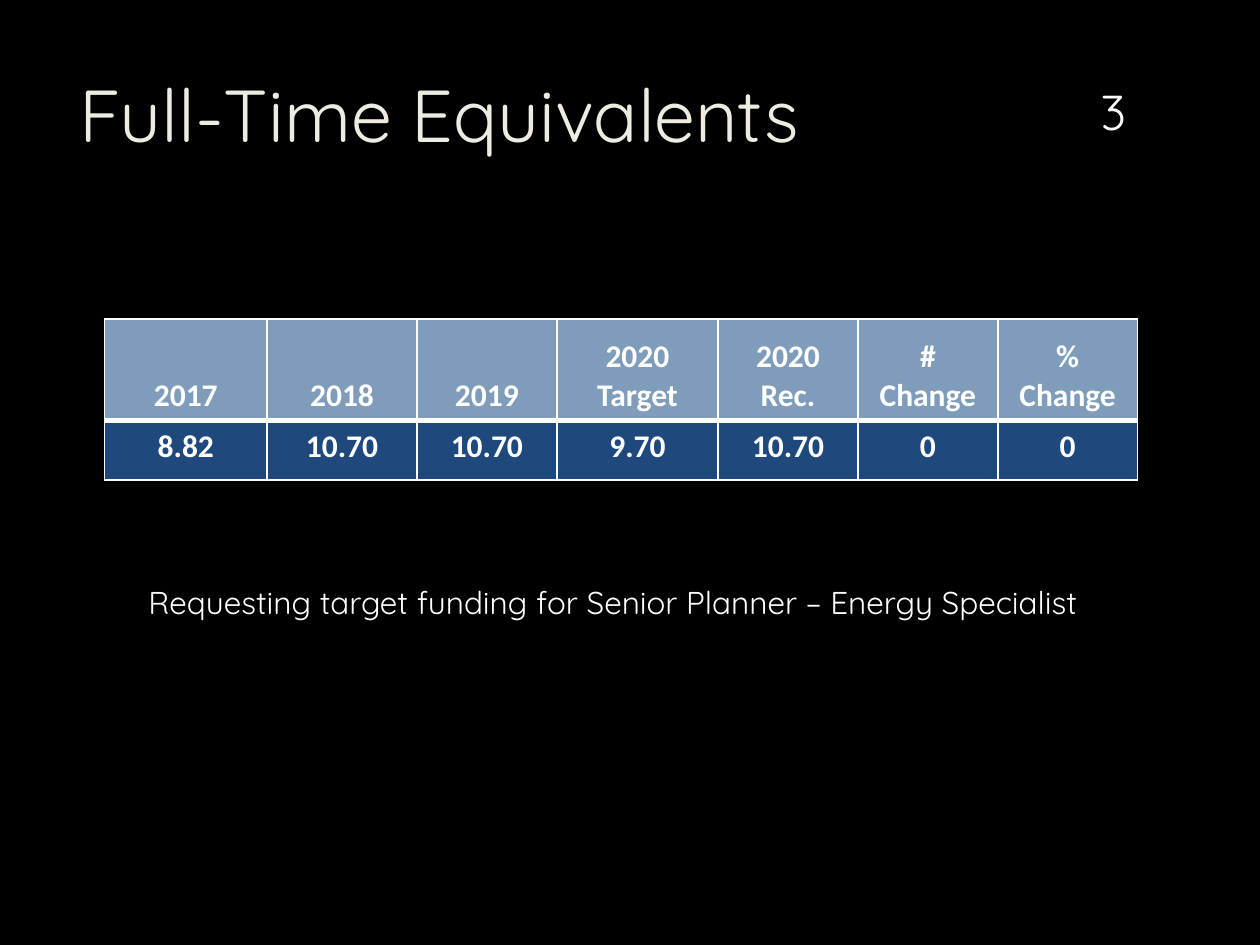
from dataclasses import dataclass

from lxml import etree
from pptx import Presentation
from pptx.dml.color import RGBColor
from pptx.enum.text import MSO_ANCHOR, PP_ALIGN
from pptx.oxml.ns import qn
from pptx.util import Inches, Pt

LEFT, CENTER = PP_ALIGN.LEFT, PP_ALIGN.CENTER
TOP, BOTTOM = MSO_ANCHOR.TOP, MSO_ANCHOR.BOTTOM

# Content
TITLE = "Full-Time Equivalents"
PAGE_NUMBER = "3"
REQUEST = "Requesting target funding for Senior Planner – Energy Specialist"
STAFFING = [
    ["2017", "2018", "2019", "2020 Target", "2020\nRec.", "#\nChange", "%\nChange"],
    ["8.82", "10.70", "10.70", "9.70", "10.70", "0", "0"],
]


@dataclass(frozen=True)
class Theme:
    background: str = "000000"
    title: str = "EEECE1"
    text: str = "FFFFFF"
    header_fill: str = "7F9DBB"
    value_fill: str = "1F497D"
    display_font: str = "Quicksand"
    table_font: str = "Calibri"
    title_size: int = 42
    number_size: int = 28
    body_size: int = 18
    thin_line: int = 1
    thick_line: int = 3


THEME = Theme()

# Layout in inches: left, top, width, height
SLIDE_SIZE = (10, 7.5)
TITLE_AREA = (0.53, 0.5, 7.72, 1.53)
NUMBER_AREA = (8.49, 0.32, 0.69, 0.84)
REQUEST_AREA = (1.08, 4.58, 7.83, 0.4)
TABLE_CORNER = (0.83, 2.53)
COLUMN_WIDTHS = [1.29, 1.19, 1.11, 1.28, 1.11, 1.11, 1.11]
ROW_HEIGHTS = [0.81, 0.47]


def write_text(frame, text, *, size, font=THEME.display_font, color=THEME.text,
               bold=False, align=LEFT):
    frame.word_wrap = True
    for index, line in enumerate(text.split("\n")):
        para = frame.add_paragraph() if index else frame.paragraphs[0]
        para.alignment = align
        span = para.add_run()
        span.text = line
        span.font.name = font
        span.font.size = Pt(size)
        span.font.bold = bold
        span.font.color.rgb = RGBColor.from_string(color)


def add_text(page, area, text, anchor=TOP, **style):
    box = page.shapes.add_textbox(*map(Inches, area))
    box.text_frame.vertical_anchor = anchor
    write_text(box.text_frame, text, **style)


def set_borders(cell, widths):
    """Draw the cell's edges; borders must precede the fill in the XML."""
    properties = cell._tc.get_or_add_tcPr()
    for position, (edge, width) in enumerate(widths.items()):
        line = etree.Element(qn(f"a:ln{edge}"), w=str(Pt(width)))
        fill = etree.SubElement(line, qn("a:solidFill"))
        etree.SubElement(fill, qn("a:srgbClr"), val=THEME.text)
        properties.insert(position, line)


def add_staffing_table(page):
    size = (sum(COLUMN_WIDTHS), sum(ROW_HEIGHTS))
    frame = page.shapes.add_table(len(STAFFING), len(COLUMN_WIDTHS),
                                  *map(Inches, TABLE_CORNER + size))
    table = frame.table
    for column, width in zip(table.columns, COLUMN_WIDTHS):
        column.width = Inches(width)
    for row, height in zip(table.rows, ROW_HEIGHTS):
        row.height = Inches(height)

    # A thick rule separates the header from the values
    thin, thick = THEME.thin_line, THEME.thick_line
    row_styles = [
        (THEME.header_fill, BOTTOM, {"L": thin, "R": thin, "T": thin, "B": thick}),
        (THEME.value_fill, TOP, {"L": thin, "R": thin, "T": thick, "B": thin}),
    ]
    for row, texts, (fill, anchor, widths) in zip(table.rows, STAFFING, row_styles):
        for cell, text in zip(row.cells, texts):
            cell.fill.solid()
            cell.fill.fore_color.rgb = RGBColor.from_string(fill)
            cell.vertical_anchor = anchor
            set_borders(cell, widths)
            write_text(cell.text_frame, text, size=THEME.body_size,
                       font=THEME.table_font, bold=True, align=CENTER)


def main():
    deck = Presentation()
    deck.slide_width, deck.slide_height = map(Inches, SLIDE_SIZE)
    page = deck.slides.add_slide(deck.slide_layouts[6])
    page.background.fill.solid()
    page.background.fill.fore_color.rgb = RGBColor.from_string(THEME.background)

    # Heading, table, page number and closing request
    add_text(page, TITLE_AREA, TITLE, size=THEME.title_size, color=THEME.title)
    add_staffing_table(page)
    add_text(page, NUMBER_AREA, PAGE_NUMBER, anchor=BOTTOM,
             size=THEME.number_size, align=CENTER)
    add_text(page, REQUEST_AREA, REQUEST, size=THEME.body_size)
    deck.save("out.pptx")


if __name__ == "__main__":
    main()
